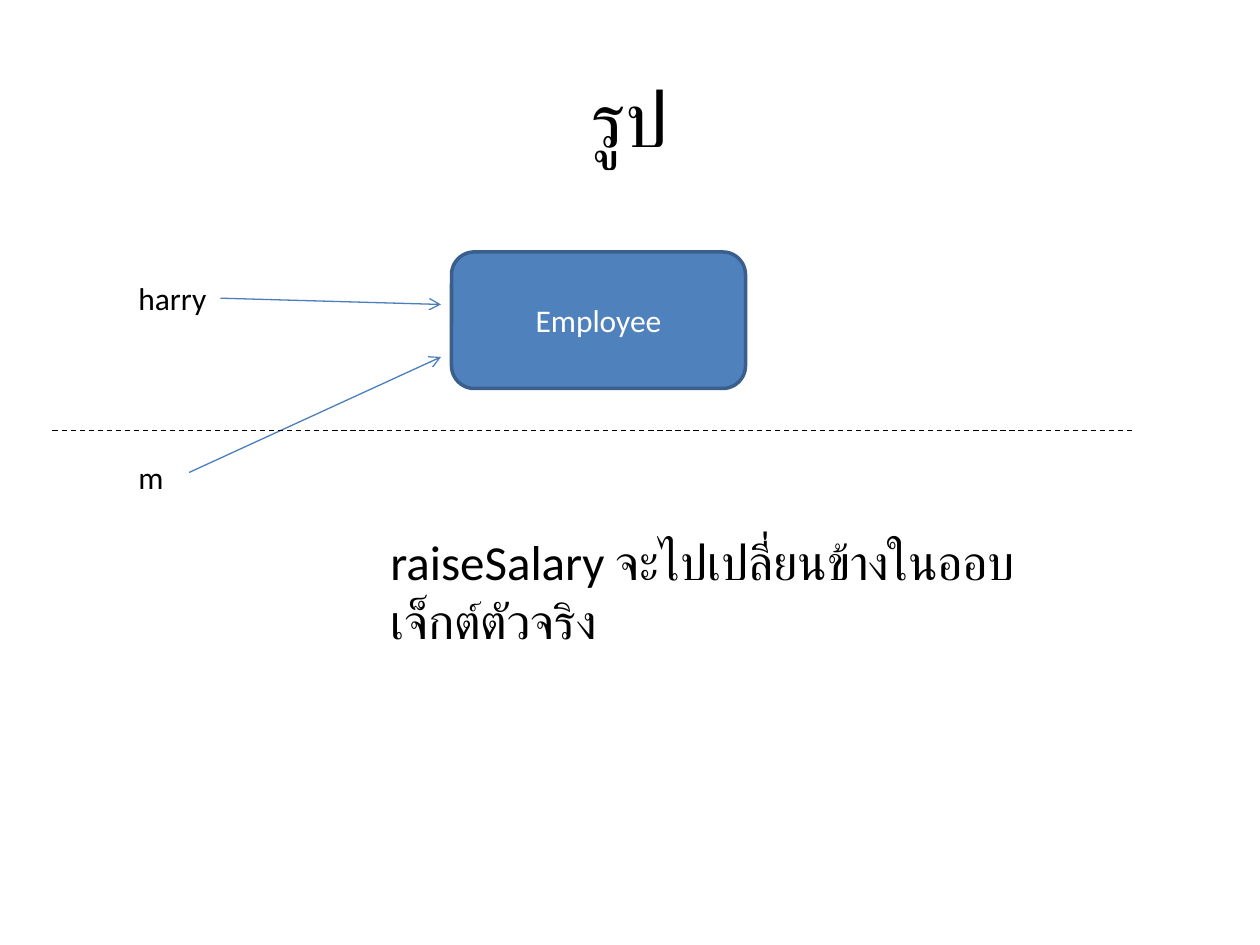
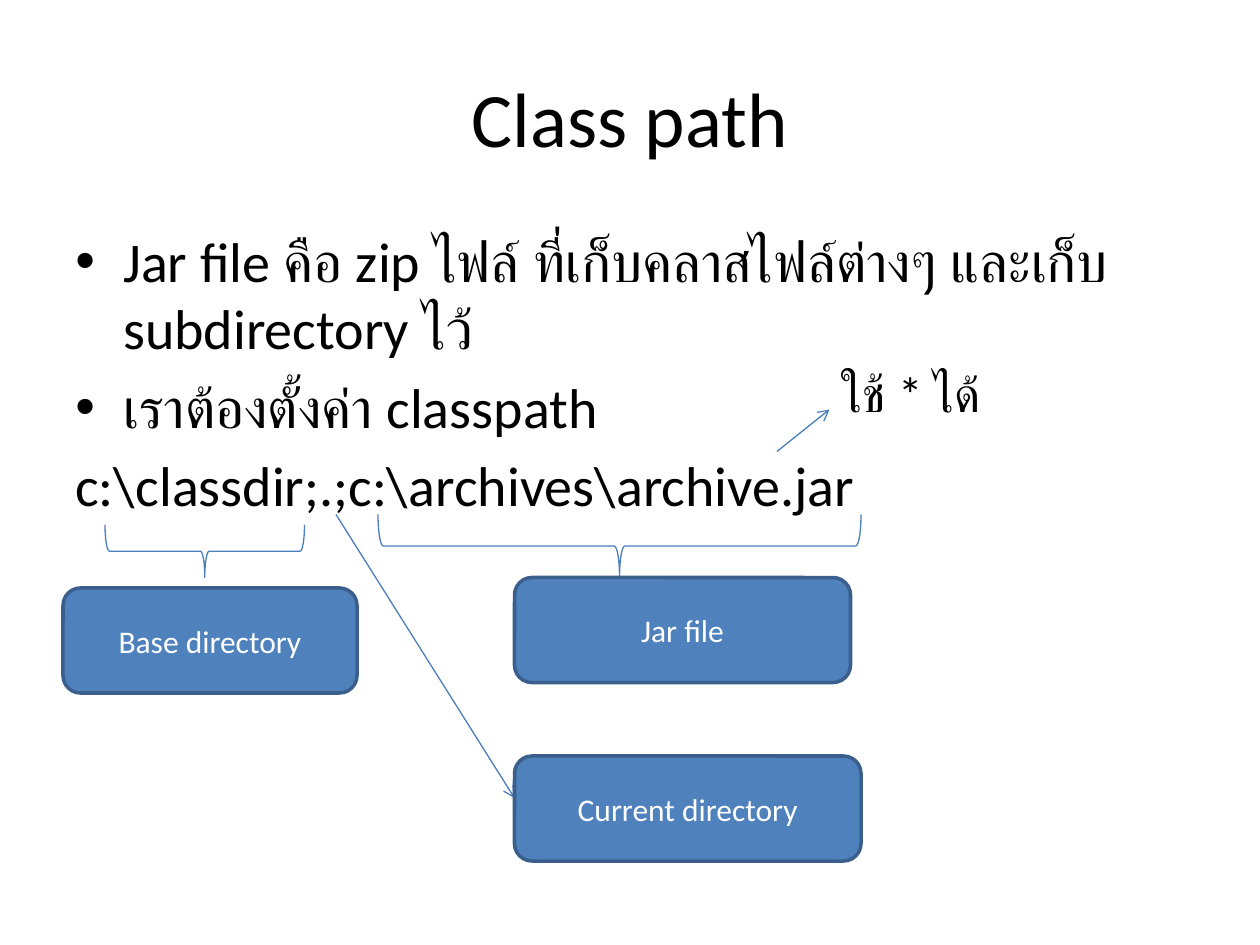
from dataclasses import dataclass

from lxml import etree
from pptx import Presentation
from pptx.dml.color import RGBColor
from pptx.enum.dml import MSO_LINE
from pptx.enum.shapes import MSO_CONNECTOR, MSO_SHAPE
from pptx.enum.text import MSO_ANCHOR, MSO_AUTO_SIZE, PP_ALIGN
from pptx.oxml.ns import qn
from pptx.util import Inches, Pt

STRAIGHT = MSO_CONNECTOR.STRAIGHT
ROUNDED = MSO_SHAPE.ROUNDED_RECTANGLE
BRACE = MSO_SHAPE.RIGHT_BRACE
DASH = MSO_LINE.DASH
TOP, MIDDLE = MSO_ANCHOR.TOP, MSO_ANCHOR.MIDDLE
LEFT, CENTER = PP_ALIGN.LEFT, PP_ALIGN.CENTER
GROW = MSO_AUTO_SIZE.SHAPE_TO_FIT_TEXT

COLUMNS, ROWS = 120, 90
BLANK_LAYOUT = 6


@dataclass(frozen=True)
class Theme:
    font: str = "Calibri"
    ink: str = "000000"
    paper: str = "FFFFFF"
    accent: str = "4F81BD"
    border: str = "3A5F8C"
    stroke: str = "4B7EBC"
    title_size: int = 44
    body_size: int = 32
    note_size: int = 28
    label_size: int = 18
    thin: float = 0.75
    thick: float = 2
    indent: float = 0.38
    space_before: str = "20000"


class Board:
    def __init__(self, deck, theme):
        self.deck = deck
        self.theme = theme
        self.page = None

    def new_page(self, title):
        self.page = self.deck.slides.add_slide(self.deck.slide_layouts[BLANK_LAYOUT])
        frame = self.text_box(6, 3.6, 108, 15, MIDDLE)
        self.add_span(frame.paragraphs[0], title, self.theme.title_size, align=CENTER)

    def across(self, columns):
        return round(self.deck.slide_width * columns / COLUMNS)

    def down(self, rows):
        return round(self.deck.slide_height * rows / ROWS)

    def area(self, left, top, width, height):
        return self.across(left), self.down(top), self.across(width), self.down(height)

    def add_span(self, para, text, size, color=None, align=LEFT):
        para.alignment = align
        span = para.add_run()
        span.text = text
        span.font.name = self.theme.font
        span.font.size = Pt(size)
        span.font.color.rgb = RGBColor.from_string(color or self.theme.ink)

    def text_box(self, left, top, width, height, anchor=TOP):
        frame = self.page.shapes.add_textbox(*self.area(left, top, width, height)).text_frame
        frame.word_wrap = True
        frame.vertical_anchor = anchor
        return frame

    def note(self, text, left, top, width, height, size, wrap=True):
        frame = self.text_box(left, top, width, height)
        frame.word_wrap = wrap
        frame.auto_size = GROW
        self.add_span(frame.paragraphs[0], text, size)

    def label(self, text, left, top, width):
        self.note(text, left, top, width, 4.8, self.theme.label_size, wrap=False)

    def body(self, items, left, top, width, height):
        frame = self.text_box(left, top, width, height)
        for index, (text, bulleted) in enumerate(items):
            para = frame.add_paragraph() if index else frame.paragraphs[0]
            self.add_span(para, text, self.theme.body_size)
            self.hang(para, bulleted)

    def hang(self, para, bulleted):
        properties = para._p.get_or_add_pPr()
        indent = Inches(self.theme.indent)
        properties.set("marL", str(indent))
        properties.set("indent", str(-indent))
        before = etree.SubElement(properties, qn("a:spcBef"))
        etree.SubElement(before, qn("a:spcPct"), val=self.theme.space_before)
        if bulleted:
            etree.SubElement(properties, qn("a:buFont"), typeface="Arial")
            etree.SubElement(properties, qn("a:buChar"), char="•")
        else:
            etree.SubElement(properties, qn("a:buNone"))

    def outline(self, shape, color, weight):
        shape.line.color.rgb = RGBColor.from_string(color)
        shape.line.width = Pt(weight)

    def box(self, text, left, top, width, height):
        theme = self.theme
        box = self.page.shapes.add_shape(ROUNDED, *self.area(left, top, width, height))
        box.shadow.inherit = False
        box.fill.solid()
        box.fill.fore_color.rgb = RGBColor.from_string(theme.accent)
        self.outline(box, theme.border, theme.thick)
        frame = box.text_frame
        frame.word_wrap = True
        frame.vertical_anchor = MIDDLE
        self.add_span(frame.paragraphs[0], text, theme.label_size, theme.paper, CENTER)

    def brace_below(self, left, top, span, depth):
        shift = (span - depth) / 2
        brace = self.page.shapes.add_shape(
            BRACE, *self.area(left + shift, top - shift, depth, span))
        brace.rotation = 90
        brace.shadow.inherit = False
        brace.fill.background()
        self.outline(brace, self.theme.stroke, self.theme.thin)

    def line(self, start, end, color):
        connector = self.page.shapes.add_connector(
            STRAIGHT, self.across(start[0]), self.down(start[1]),
            self.across(end[0]), self.down(end[1]))
        self.outline(connector, color, self.theme.thin)
        etree.SubElement(connector._element.spPr, qn("a:effectLst"))
        return connector

    def arrow(self, start, end):
        connector = self.line(start, end, self.theme.stroke)
        stroke = connector._element.spPr.find(qn("a:ln"))
        etree.SubElement(stroke, qn("a:tailEnd"), type="arrow")

    def divider(self, left, right, row):
        self.line((left, row), (right, row), self.theme.ink).line.dash_style = DASH


def draw_references(board):
    board.new_page("รูป")
    board.label("harry", 12, 26, 9)
    board.arrow((21, 28.4), (42, 29))
    board.box("Employee", 43, 24, 28, 13)
    board.label("m", 12, 43, 4.8)
    board.arrow((18, 45), (42, 34))
    board.divider(5, 108, 41)
    board.note("raiseSalary จะไปเปลี่ยนข้างในออบเจ็กต์ตัวจริง",
               36, 50, 68.6, 6.8, board.theme.note_size)


def draw_class_path(board):
    board.new_page("Class path")
    board.body([
        ("Jar file คือ zip ไฟล์ ที่เก็บคลาสไฟล์ต่างๆ และเก็บ subdirectory ไว้", True),
        ("เราต้องตั้งค่า classpath", True),
        (r"c:\classdir;.;c:\archives\archive.jar", False),
    ], 6, 21, 108, 59.4)
    board.brace_below(10, 50, 19, 5)
    board.brace_below(36, 49, 46, 6)
    board.box("Base directory", 6, 56, 28, 10)
    board.box("Jar file", 49, 55, 32, 10)
    board.arrow((32, 49), (49, 76))
    board.box("Current directory", 49, 72, 33, 10)
    board.arrow((74, 43), (79, 39))
    board.note("ใช้ * ได้", 79, 34, 33, 6.8, board.theme.note_size)


def main():
    deck = Presentation()
    deck.slide_width, deck.slide_height = Inches(10), Inches(7.5)
    board = Board(deck, Theme())
    draw_references(board)
    draw_class_path(board)
    deck.save("out.pptx")


if __name__ == "__main__":
    main()
